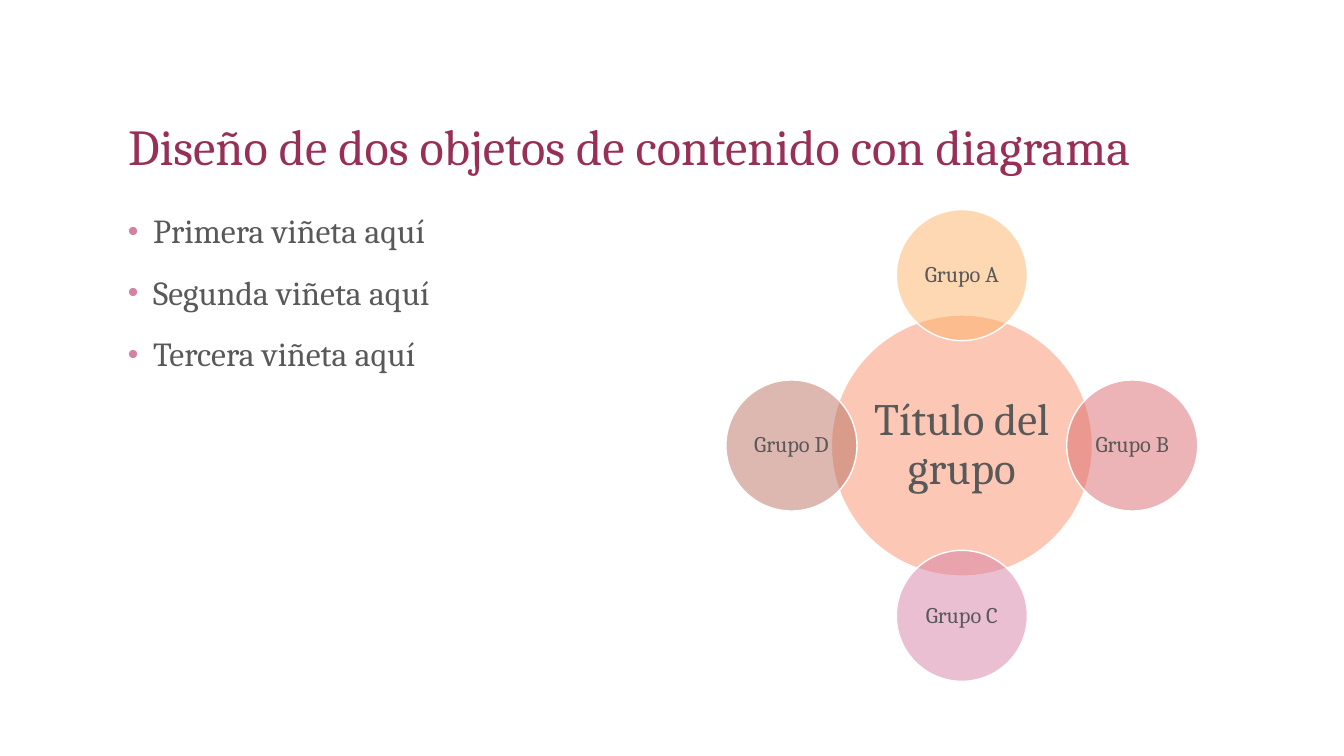
from pptx import Presentation
from pptx.dml.color import RGBColor
from pptx.enum.shapes import MSO_SHAPE
from pptx.enum.text import MSO_ANCHOR, PP_ALIGN
from pptx.oxml.ns import qn
from pptx.util import Inches, Pt
from lxml.etree import SubElement

COLORS = {
    "title": "972F57", "text": "595959", "bullet": "D680A5", "line": "FFFFFF",
    "hub": "FA906A", "A": "FCB268", "B": "DB6B70", "C": "D680A5", "D": "BA7362",
}


def style(para, size, color):
    para.line_spacing = 0.9
    para.font.name = "Cambria"
    para.font.size = Pt(size)
    para.font.color.rgb = RGBColor.from_string(COLORS[color])


def add_disc(slide, x, y, width, color, text, size, inset):
    disc = slide.shapes.add_shape(
        MSO_SHAPE.OVAL, Inches(x - width / 2), Inches(y - width / 2),
        Inches(width), Inches(width))
    disc.shadow.inherit = False
    disc.fill.solid()
    disc.fill.fore_color.rgb = RGBColor.from_string(COLORS[color])
    tint = disc.fill._xPr.find(qn("a:solidFill"))[0]
    SubElement(tint, qn("a:alpha"), val="50000")
    disc.line.color.rgb = RGBColor.from_string(COLORS["line"])
    disc.line.width = Pt(1)
    frame = disc.text_frame
    frame.word_wrap = True
    frame.vertical_anchor = MSO_ANCHOR.MIDDLE
    frame.margin_left = frame.margin_right = Inches(inset)
    frame.margin_top = frame.margin_bottom = Inches(inset)
    para = frame.paragraphs[0]
    para.text = text
    para.alignment = PP_ALIGN.CENTER
    style(para, size, "text")


deck = Presentation()
deck.slide_width, deck.slide_height = Inches(13.33), Inches(7.5)
slide = deck.slides.add_slide(deck.slide_layouts[5])

# Title
title = slide.shapes.title
title.left, title.top = Inches(1.17), Inches(0.5)
title.width, title.height = Inches(11), Inches(1.3)
title.text_frame.vertical_anchor = MSO_ANCHOR.BOTTOM
head = title.text_frame.paragraphs[0]
head.text = "Diseño de dos objetos de contenido con diagrama"
head.alignment = PP_ALIGN.LEFT
style(head, 36, "title")

# Bullet list
body = slide.shapes.add_textbox(Inches(1.17), Inches(2.08), Inches(5.25), Inches(4.67))
frame = body.text_frame
frame.word_wrap = True
for i, word in enumerate(["Primera", "Segunda", "Tercera"]):
    para = frame.add_paragraph() if i else frame.paragraphs[0]
    para.text = f"{word} viñeta aquí"
    props = para._p.get_or_add_pPr()
    props.set("marL", str(Inches(0.25)))
    props.set("indent", str(-Inches(0.25)))
    tint = SubElement(props, qn("a:buClr"))
    SubElement(tint, qn("a:srgbClr"), val=COLORS["bullet"])
    SubElement(props, qn("a:buSzPct"), val="90000")
    SubElement(props, qn("a:buFont"), typeface="Arial")
    SubElement(props, qn("a:buChar"), char="•")
    if i:
        para.space_before = Pt(18)
    style(para, 24, "text")

# Radial diagram: a hub with four groups around it
mid_x, mid_y, reach = 9.54, 4.42, 1.69
add_disc(slide, mid_x, mid_y, 2.59, "hub", "Título del grupo", 32, 0.04)
sides = {"A": (0, -1), "B": (1, 0), "C": (0, 1), "D": (-1, 0)}
for key, (dx, dy) in sides.items():
    add_disc(slide, mid_x + dx * reach, mid_y + dy * reach, 1.3,
             key, f"Grupo {key}", 16, 0.02)

deck.save("out.pptx")
